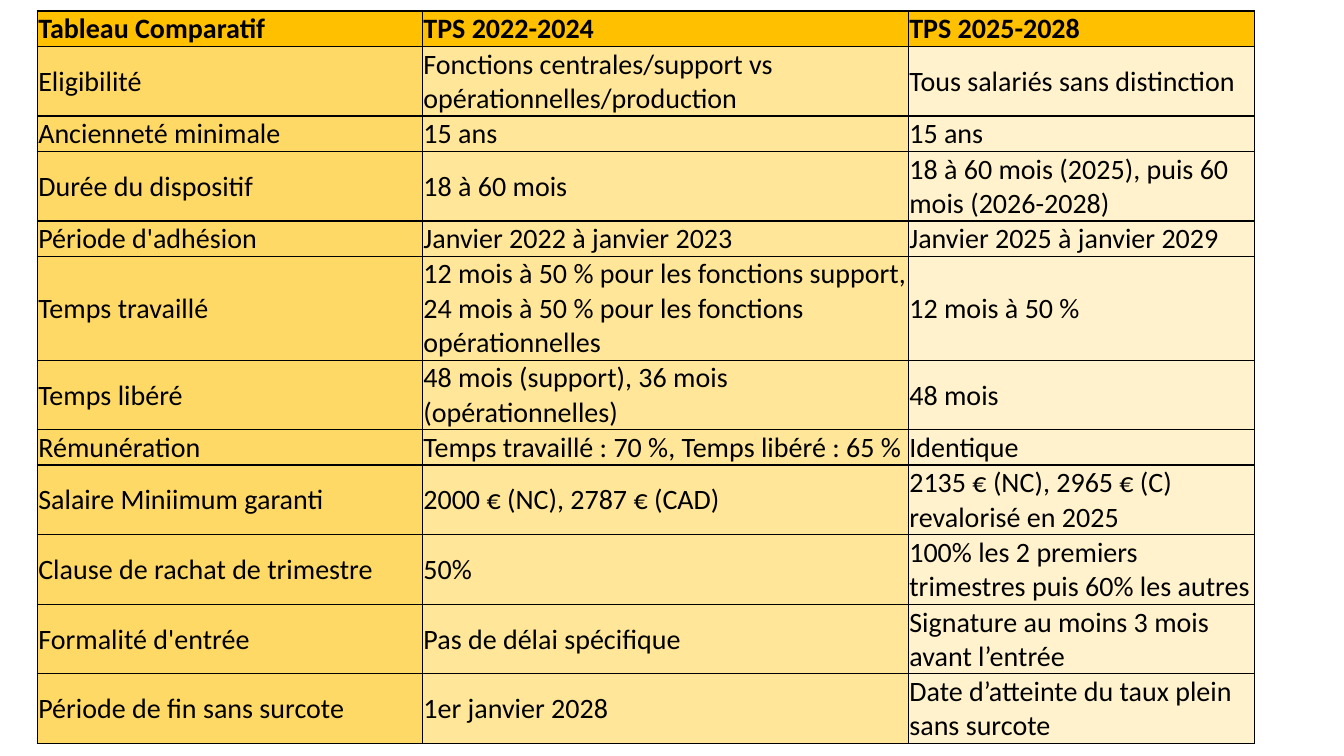
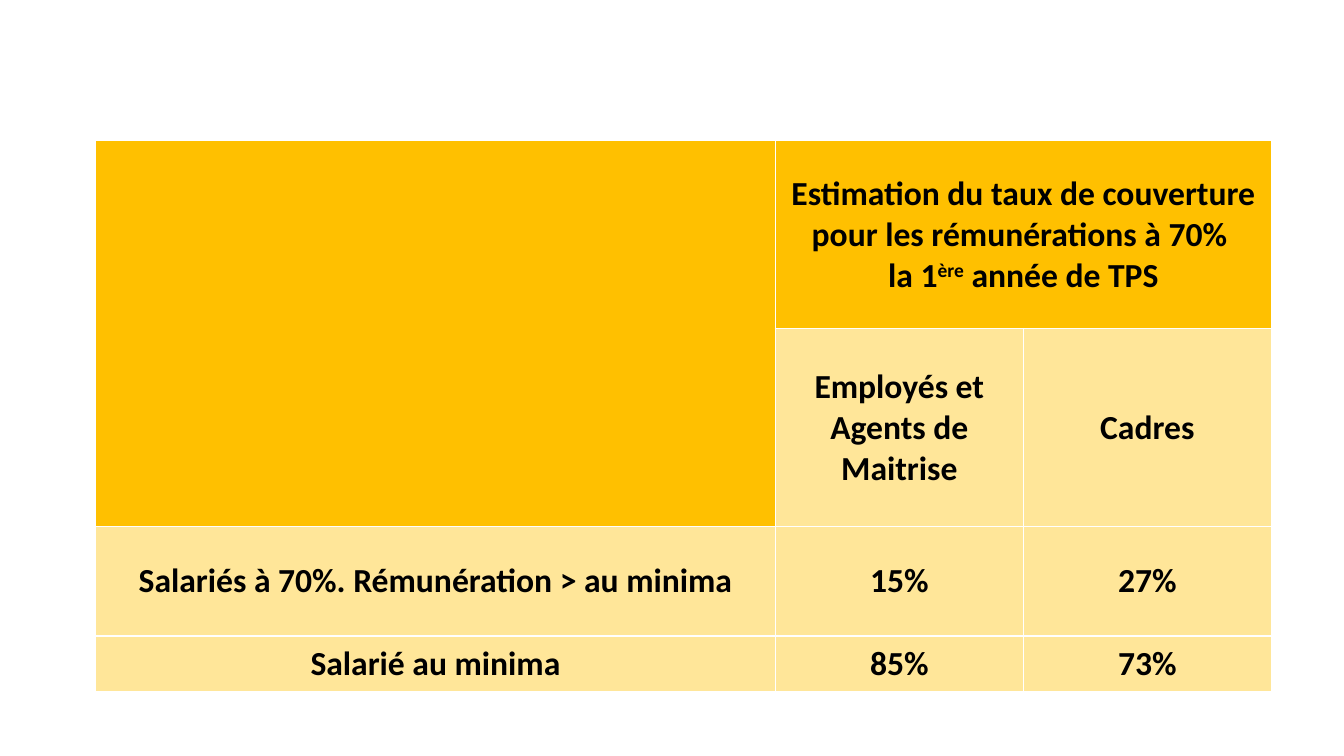
from dataclasses import dataclass

from pptx import Presentation
from pptx.dml.color import RGBColor
from pptx.enum.text import MSO_ANCHOR, PP_ALIGN
from pptx.oxml import parse_xml
from pptx.oxml.ns import nsdecls
from pptx.util import Inches, Pt

FONT = "Calibri"
COLORS = {
    "text": "000000",
    "white": "FFFFFF",
    "header": "FFC000",
    "label": "FFD966",
    "middle": "FFE699",
    "light": "FFF2CC",
}


@dataclass
class TableSpec:
    left: float
    top: float
    cols: list[float]
    rows: list[float]
    texts: list[list[str]]
    fills: list[list[str]]
    border: str
    size: int
    align: PP_ALIGN
    bold_rows: int
    merges: tuple = ()  # pairs of (row, column) corners


def set_borders(cell, color: str) -> None:
    """Draw a 1 pt line on the four sides of a cell."""
    tcPr = cell._tc.get_or_add_tcPr()
    for i, side in enumerate(("lnL", "lnR", "lnT", "lnB")):
        tcPr.insert(i, parse_xml(
            f'<a:{side} {nsdecls("a")} w="12700"><a:solidFill>'
            f'<a:srgbClr val="{COLORS[color]}"/></a:solidFill></a:{side}>'))


def write_text(tf, text: str, *, size: int, bold: bool, align: PP_ALIGN) -> None:
    """Write one paragraph a line; text between carets is superscript."""
    for i, line in enumerate(text.split("\n")):
        p = tf.add_paragraph() if i else tf.paragraphs[0]
        p.alignment = align
        for j, part in enumerate(line.split("^")):
            r = p.add_run()
            r.text = part
            r.font.name = FONT
            r.font.size = Pt(size)
            r.font.bold = bold
            r.font.color.rgb = RGBColor.from_string(COLORS["text"])
            if j % 2:
                r._r.get_or_add_rPr().set("baseline", "30000")


def add_table(s, spec: TableSpec) -> None:
    table = s.shapes.add_table(
        len(spec.rows), len(spec.cols), Inches(spec.left), Inches(spec.top),
        Inches(sum(spec.cols)), Inches(sum(spec.rows))).table
    table.first_row = table.horz_banding = False
    for column, width in zip(table.columns, spec.cols):
        column.width = Inches(width)
    for row, height in zip(table.rows, spec.rows):
        row.height = Inches(height)

    for i, (texts, fills) in enumerate(zip(spec.texts, spec.fills)):
        for j, (text, fill) in enumerate(zip(texts, fills)):
            cell = table.cell(i, j)
            cell.fill.solid()
            cell.fill.fore_color.rgb = RGBColor.from_string(COLORS[fill])
            set_borders(cell, spec.border)
            cell.vertical_anchor = MSO_ANCHOR.MIDDLE
            cell.margin_left = cell.margin_right = cell.margin_top = Inches(0.01)
            cell.margin_bottom = 0
            if text:
                write_text(cell.text_frame, text, size=spec.size,
                           bold=i < spec.bold_rows, align=spec.align)
    for first, last in spec.merges:
        table.cell(*first).merge(table.cell(*last))


# Comparison of the two plans
COMPARISON = [
    ["Tableau Comparatif", "TPS 2022-2024", "TPS 2025-2028"],
    ["Eligibilité", "Fonctions centrales/support vs opérationnelles/production",
     "Tous salariés sans distinction"],
    ["Ancienneté minimale", "15 ans", "15 ans"],
    ["Durée du dispositif", "18 à 60 mois",
     "18 à 60 mois (2025), puis 60 mois (2026-2028)"],
    ["Période d'adhésion", "Janvier 2022 à janvier 2023",
     "Janvier 2025 à janvier 2029"],
    ["Temps travaillé",
     "12 mois à 50 % pour les fonctions support, "
     "24 mois à 50 % pour les fonctions opérationnelles",
     "12 mois à 50 %"],
    ["Temps libéré", "48 mois (support), 36 mois (opérationnelles)", "48 mois"],
    ["Rémunération", "Temps travaillé : 70 %, Temps libéré : 65 %", "Identique"],
    ["Salaire Miniimum garanti", "2000 € (NC), 2787 € (CAD)",
     "2135 € (NC), 2965 € (C) revalorisé en 2025"],
    ["Clause de rachat de trimestre", "50%",
     "100% les 2 premiers trimestres puis 60% les autres"],
    ["Formalité d'entrée", "Pas de délai spécifique",
     "Signature au moins 3 mois avant l’entrée"],
    ["Période de fin sans surcote", "1er janvier 2028",
     "Date d’atteinte du taux plein sans surcote"],
]

# Estimated coverage rates
COVERAGE = [
    ["", "Estimation du taux de couverture pour les rémunérations à 70% \n"
         "la 1^ère^ année de TPS", ""],
    ["", "Employés et Agents de Maitrise", "Cadres"],
    ["Salariés à 70%. Rémunération > au minima", "15%", "27%"],
    ["Salarié au minima", "85%", "73%"],
]

# Row heights that just hold their lines, so the table ends above the slide edge
ONE_LINE, TWO_LINES, THREE_LINES = 0.35, 0.69, 1.03

TABLES = [
    TableSpec(
        left=0.37, top=0.11, cols=[3.82, 4.82, 3.43],
        rows=[ONE_LINE, TWO_LINES] * 2 + [ONE_LINE, THREE_LINES, TWO_LINES, ONE_LINE]
        + [TWO_LINES] * 4,
        texts=COMPARISON,
        fills=[["header"] * 3] + [["label", "middle", "light"]] * 11,
        border="text", size=20, align=PP_ALIGN.LEFT, bold_rows=1),
    TableSpec(
        left=0.95, top=1.39, cols=[6.74, 2.46, 2.46],
        rows=[1.87, 1.96, 1.09, 0.55],
        texts=COVERAGE,
        fills=[["header"] * 3, ["header", "middle", "middle"]] + [["middle"] * 3] * 2,
        border="white", size=24, align=PP_ALIGN.CENTER, bold_rows=4,
        merges=(((0, 0), (1, 0)), ((0, 1), (0, 2)))),
]


def main() -> None:
    prs = Presentation()
    prs.slide_width, prs.slide_height = Inches(13.33), Inches(7.5)
    for spec in TABLES:
        add_table(prs.slides.add_slide(prs.slide_layouts[6]), spec)
    prs.save("out.pptx")


if __name__ == "__main__":
    main()
